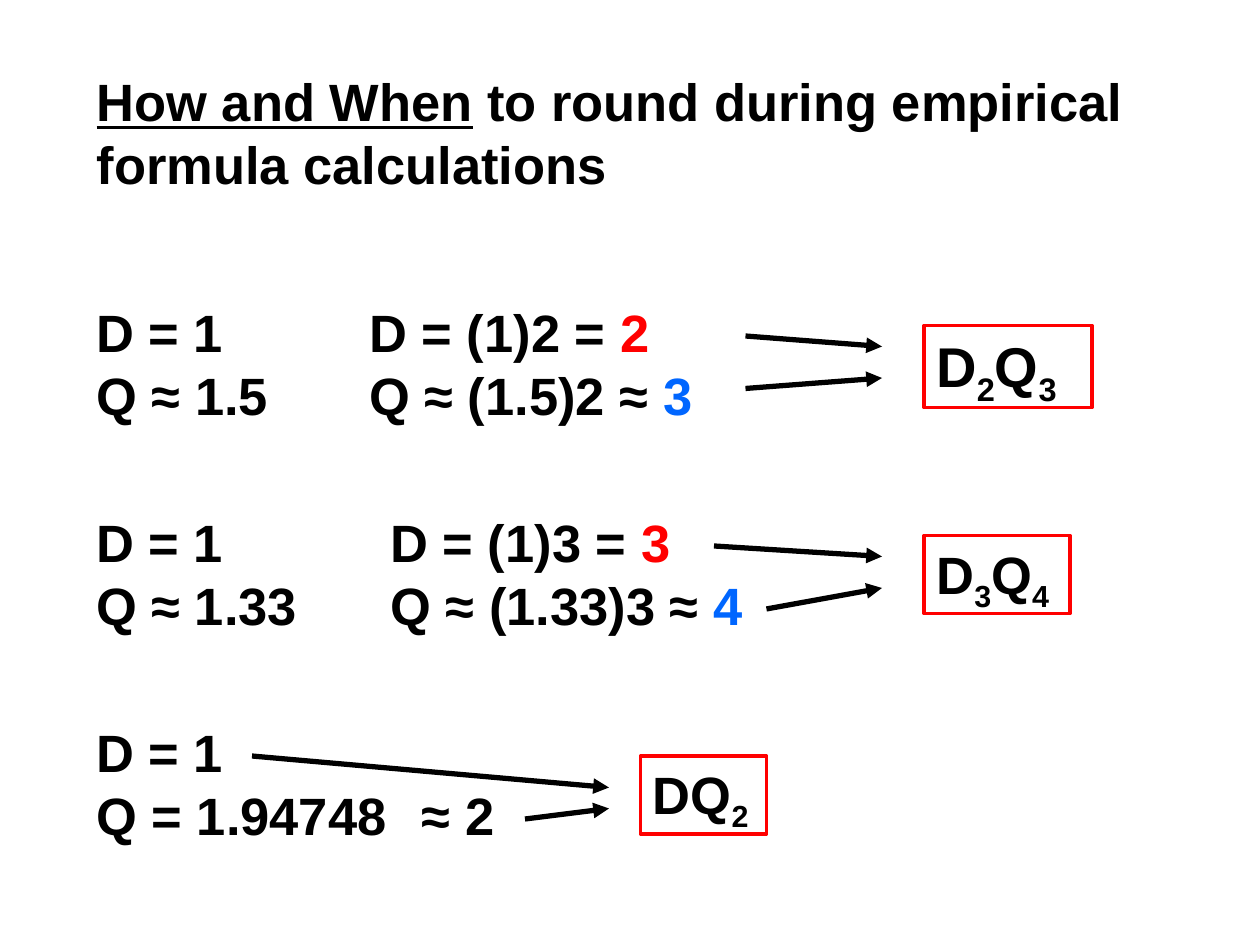
from lxml import etree
from pptx import Presentation
from pptx import util as u
from pptx.dml import color
from pptx.enum import shapes, text
from pptx.oxml import ns

BLACK, RED, BLUE = "000000", "FF0000", "0066FF"
LEFT = 48      # left edge of the first column
STEP = 120     # distance between examples
TOP = 168      # top of the first example


def rgb(code):
    return color.RGBColor.from_string(code)


def place(item, x, y, w, h):
    item.left, item.top, item.width, item.height = map(u.Pt, (x, y, w, h))


def style(font, form):
    for key, val in form.items():
        setattr(font, key, val)


def write(item, paras, size=30, wrap=True):
    """Fill a shape; each paragraph is a list of (text, format) runs."""
    frame = item.text_frame
    frame.word_wrap = wrap
    frame.auto_size = text.MSO_AUTO_SIZE.SHAPE_TO_FIT_TEXT
    frame.vertical_anchor = text.MSO_ANCHOR.TOP
    for i, runs in enumerate(paras):
        para = frame.add_paragraph() if i else frame.paragraphs[0]
        para.alignment = text.PP_ALIGN.LEFT
        for words, form in runs:
            form = dict(form)
            tone = form.pop("tone", BLACK)
            base = form.pop("base", None)
            for n, line in enumerate(words.split("\n")):
                if n:
                    para.add_line_break()
                run = para.add_run()
                run.text = line
                style(run.font, {"name": "Arial", "size": u.Pt(size), "bold": True, **form})
                run.font.color.rgb = rgb(tone)
                if base:
                    run._r.get_or_add_rPr().set("baseline", str(base * 1000))


def label(slide, x, y, w, paras, h=79.2, wrap=True):
    item = slide.shapes.add_textbox(0, 0, 0, 0)
    write(item, paras, wrap=wrap)
    place(item, x, y, w, h)


def scaled(slide, x, y, w, top, low):
    """Two multiplied lines, each ending in a coloured result."""
    paras = [[(words, {}), (num, {"tone": tone})]
             for (words, num), tone in zip((top, low), (RED, BLUE))]
    label(slide, x, y, w, paras)


def answer(slide, x, y, w, h, parts, size=30, wrap=False):
    """Red frame with a formula; digits are set as subscripts."""
    item = slide.shapes.add_shape(shapes.MSO_SHAPE.RECTANGLE, 0, 0, 0, 0)
    item.shadow.inherit = False
    item.fill.background()
    item.line.color.rgb = rgb(RED)
    item.line.width = u.Pt(2)
    runs = [(p, {"base": -25} if p.isdigit() else {}) for p in parts]
    write(item, [runs], size, wrap)
    place(item, x, y, w, h)


def arrow(slide, *ends):
    link = slide.shapes.add_connector(shapes.MSO_CONNECTOR.STRAIGHT, *map(u.Pt, ends))
    link.line.color.rgb = rgb(BLACK)
    link.line.width = u.Pt(3)
    etree.SubElement(link.line._get_or_add_ln(), ns.qn("a:tailEnd"), type="triangle")
    etree.SubElement(link._element.spPr, ns.qn("a:effectLst"))


def main():
    deck = Presentation()
    deck.slide_width, deck.slide_height = u.Pt(720), u.Pt(540)
    slide = deck.slides.add_slide(deck.slide_layouts[5])

    # Title
    title = slide.shapes.title
    write(title, [[("How and When", {"underline": True}),
                   (" to round during empirical formula calculations", {})]])
    place(title, LEFT, 36, 636, 79.2)

    # Starting ratios
    ratios = [("1.5", "≈", 120, True), ("1.33", "≈", 129.6, False), ("1.94748", "=", 204, True)]
    rows = [TOP + STEP * i for i in range(len(ratios))]
    for y, (num, sign, w, wrap) in zip(rows, ratios):
        label(slide, LEFT, y, w, [[(f"D = 1\nQ {sign} {num}", {})]], wrap=wrap)

    # Ratios after multiplying or rounding
    scaled(slide, 204, rows[0], 210, ("D = (1)2 = ", "2"), ("Q ≈ (1.5)2 ≈ ", "3"))
    scaled(slide, 216, rows[1], 234, ("D = (1)3 = ", "3"), ("Q ≈ (1.33)3 ≈ ", "4"))
    label(slide, 234, 444, 60, [[("≈ 2", {})]], h=43.2)

    # Arrows to the answers
    for ends in [(426, 192, 504, 198), (426, 222, 504, 216),
                 (408, 312, 504, 318), (438, 348, 504, 336),
                 (144, 432, 348, 450), (300, 468, 348, 462)]:
        arrow(slide, *ends)

    # Empirical formulas
    answer(slide, 528, 186, 96, 46.8, "D2Q3", size=32, wrap=True)
    answer(slide, 528, 306, 83.5, 44.6, "D3Q4")
    answer(slide, 366, 432, 72, 44.6, ["DQ", "2"])

    deck.save("out.pptx")


if __name__ == "__main__":
    main()
